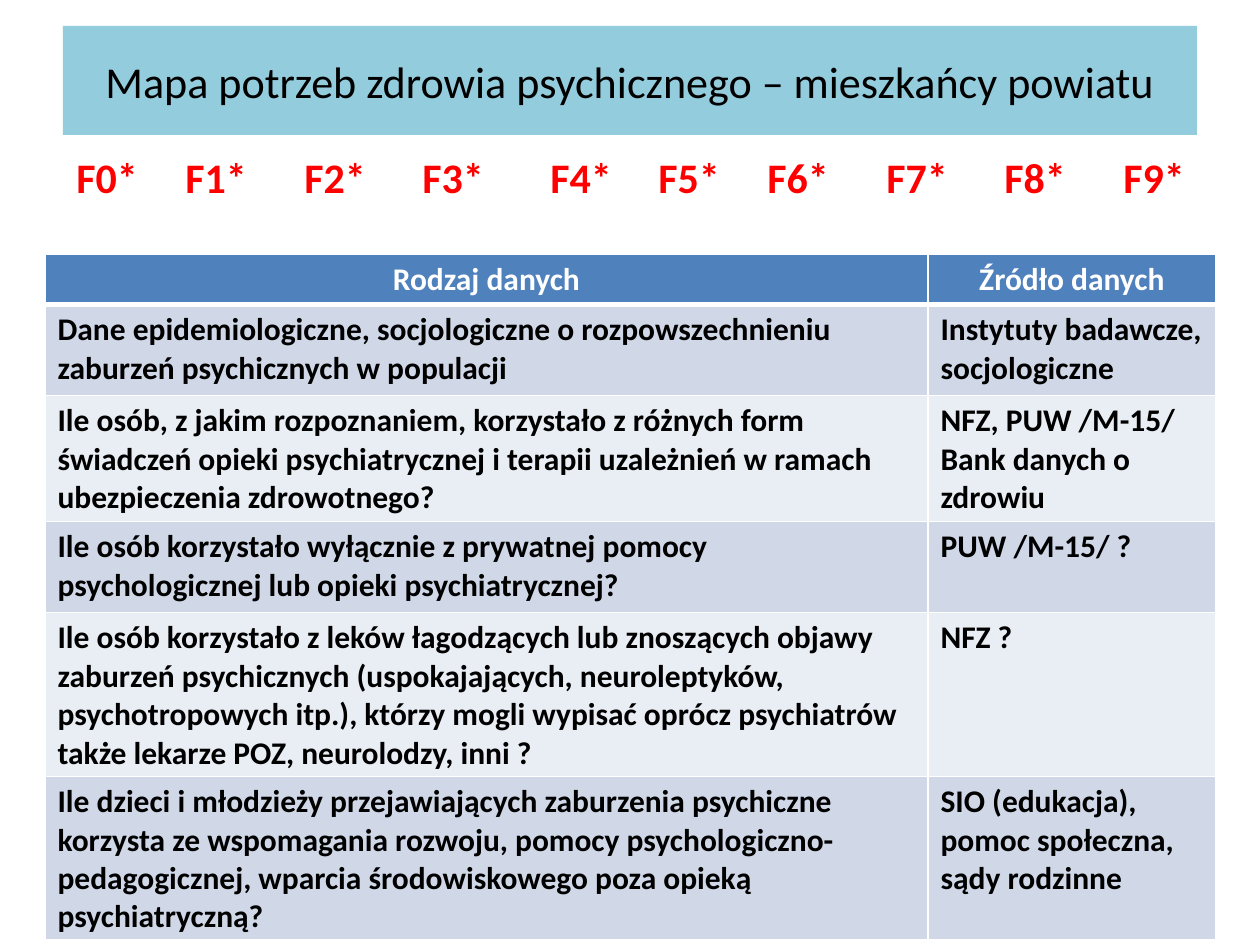
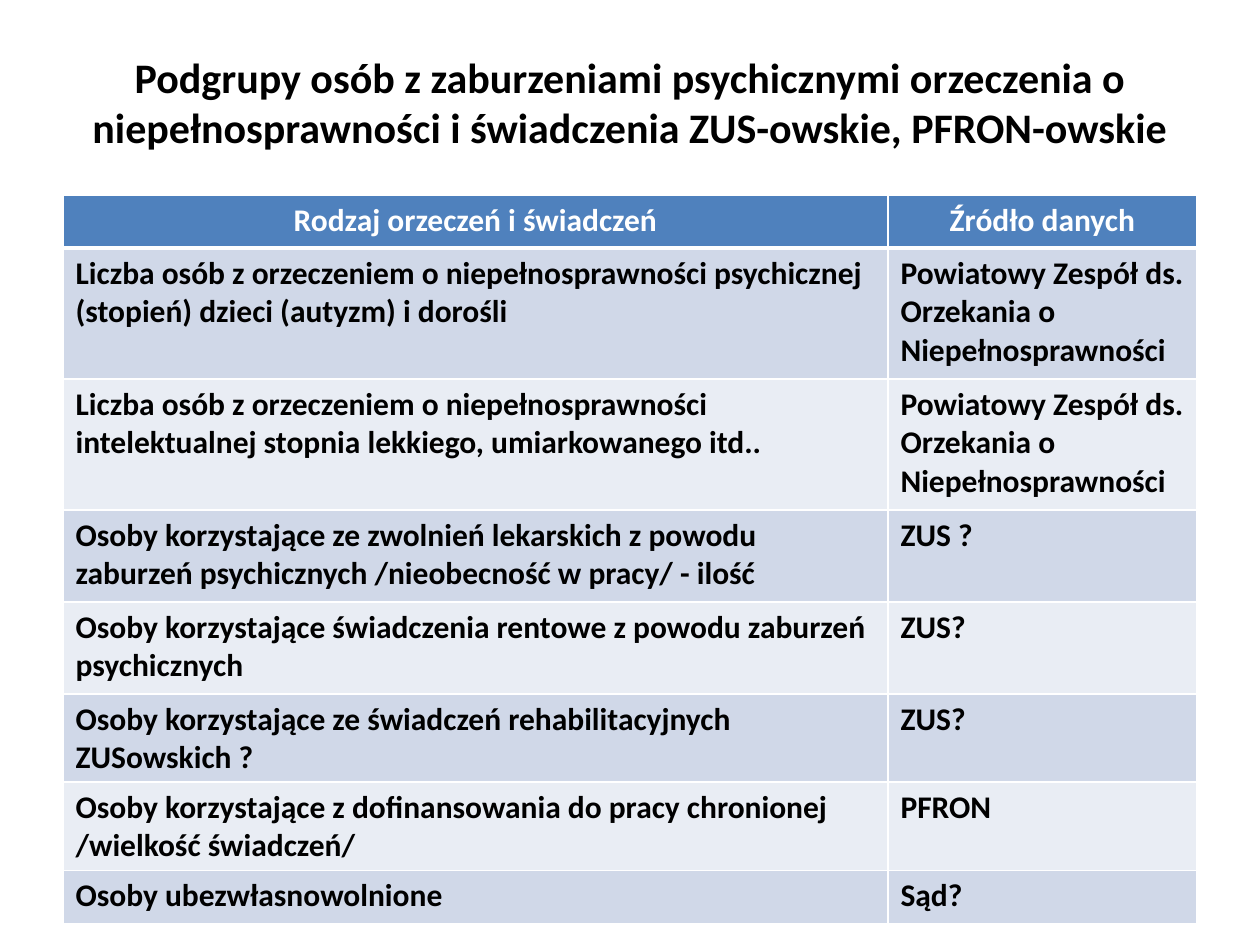
from dataclasses import dataclass

from lxml.etree import SubElement
from pptx import Presentation
from pptx.dml.color import RGBColor as Rgb
from pptx.enum.shapes import MSO_SHAPE as Shape
from pptx.enum.text import MSO_ANCHOR as Anchor, PP_ALIGN as Align
from pptx.oxml.ns import qn
from pptx.util import Pt


@dataclass(frozen=True)
class Theme:
    font: str = "Calibri"
    text: str = "000000"
    white: str = "FFFFFF"
    title_band: str = "93CDDD"
    codes: str = "FF0000"
    header: str = "4F81BD"
    bands: tuple = ("D0D8E8", "E9EDF4")
    band_title_size: float = 25.2
    title_size: int = 24
    codes_size: int = 24
    table_size: int = 18
    border: int = 1
    header_border: int = 3


THEME = Theme()
PX = 914400 / 126  # EMU in one px
SLIDE_W, SLIDE_H = 1260, 945


def px(*lengths):
    return [round(length * PX) for length in lengths]


def write(frame, text, size, color, bold=True, align=Align.LEFT):
    frame.word_wrap = True
    paragraph = frame.paragraphs[0]
    paragraph.alignment = align
    run = paragraph.add_run()
    run.text = text
    run.font.name = THEME.font
    run.font.size = Pt(size)
    run.font.bold = bold
    run.font.color.rgb = Rgb.from_string(color)
    return paragraph


# Content: each table starts with its header row
needs_rows = [
    ("Rodzaj danych", "Źródło danych"),
    ("Dane epidemiologiczne, socjologiczne o rozpowszechnieniu zaburzeń "
     "psychicznych w populacji",
     "Instytuty badawcze, socjologiczne"),
    ("Ile osób, z jakim rozpoznaniem, korzystało z różnych form świadczeń opieki "
     "psychiatrycznej i terapii uzależnień w ramach ubezpieczenia zdrowotnego?",
     "NFZ, PUW /M-15/ Bank danych o zdrowiu"),
    ("Ile osób korzystało wyłącznie z prywatnej pomocy psychologicznej lub opieki "
     "psychiatrycznej?",
     "PUW /M-15/ ?"),
    ("Ile osób korzystało z leków łagodzących lub znoszących objawy zaburzeń "
     "psychicznych (uspokajających, neuroleptyków, psychotropowych itp.), którzy "
     "mogli wypisać oprócz psychiatrów także lekarze POZ, neurolodzy, inni ?",
     "NFZ ?"),
    ("Ile dzieci i młodzieży przejawiających zaburzenia psychiczne korzysta ze "
     "wspomagania rozwoju, pomocy psychologiczno-pedagogicznej, wparcia "
     "środowiskowego poza opieką psychiatryczną?",
     "SIO (edukacja), pomoc społeczna, sądy rodzinne"),
]
disability_board = "Powiatowy Zespół ds. Orzekania o Niepełnosprawności"
benefits_rows = [
    ("Rodzaj orzeczeń i świadczeń", "Źródło danych"),
    ("Liczba osób z orzeczeniem o niepełnosprawności psychicznej (stopień) dzieci "
     "(autyzm) i dorośli", disability_board),
    ("Liczba osób z orzeczeniem o niepełnosprawności intelektualnej stopnia "
     "lekkiego, umiarkowanego itd..", disability_board),
    ("Osoby korzystające ze zwolnień lekarskich z powodu zaburzeń psychicznych "
     "/nieobecność w pracy/ - ilość", "ZUS ?"),
    ("Osoby korzystające świadczenia rentowe z powodu zaburzeń psychicznych", "ZUS?"),
    ("Osoby korzystające ze świadczeń rehabilitacyjnych ZUSowskich ?", "ZUS?"),
    ("Osoby korzystające z dofinansowania do pracy chronionej /wielkość świadczeń/",
     "PFRON"),
    ("Osoby ubezwłasnowolnione", "Sąd?"),
]

deck = Presentation()
deck.slide_width, deck.slide_height = px(SLIDE_W, SLIDE_H)
blank = deck.slide_layouts[6]
needs_slide = deck.slides.add_slide(blank)
benefits_slide = deck.slides.add_slide(blank)

# Title on a coloured band
title_band = needs_slide.shapes.add_shape(Shape.RECTANGLE, *px(63, 26, 1134, 109))
title_band.shadow.inherit = False
title_band.fill.solid()
title_band.fill.fore_color.rgb = Rgb.from_string(THEME.title_band)
title_band.line.fill.background()
title_band.text_frame.vertical_anchor = Anchor.MIDDLE
write(title_band.text_frame, "Mapa potrzeb zdrowia psychicznego – mieszkańcy powiatu",
      THEME.band_title_size, THEME.text, bold=False, align=Align.CENTER)

# Diagnosis codes F0 to F9, spread with tab stops
diagnosis_codes = needs_slide.shapes.add_textbox(*px(64, 145, 1134, 63))
codes_line = write(diagnosis_codes.text_frame, "\t".join(f"F{n}*" for n in range(10)),
                   THEME.codes_size, THEME.codes)
tab_stops = SubElement(codes_line._p.get_or_add_pPr(), qn("a:tabLst"))
for stop in px(109, 228, 346, 474, 582, 691, 810, 928, 1047):
    SubElement(tab_stops, qn("a:tab"), pos=str(stop), algn="l")

# Plain title
benefits_title = benefits_slide.shapes.add_textbox(*px(63, 38, 1134, 127))
benefits_title.text_frame.vertical_anchor = Anchor.MIDDLE
write(benefits_title.text_frame,
      "Podgrupy osób z zaburzeniami psychicznymi orzeczenia o niepełnosprawności "
      "i świadczenia ZUS-owskie, PFRON-owskie",
      THEME.title_size, THEME.text, align=Align.CENTER)

# Data and source tables
tables = [
    (needs_slide, needs_rows, 45, 254, (883, 288), [39] + [91] * 5),
    (benefits_slide, benefits_rows, 63, 195, (825, 309),
     [53, 131, 131, 92, 92, 53, 53, 53]),
]
for slide, rows, left, top, widths, heights in tables:
    table = slide.shapes.add_table(
        len(rows), len(widths), *px(left, top, sum(widths), sum(heights))).table
    for column, width in zip(table.columns, px(*widths)):
        column.width = width
    for row, height in zip(table.rows, px(*heights)):
        row.height = height

    for r, row_texts in enumerate(rows):
        is_header = r == 0
        fill = THEME.header if is_header else THEME.bands[(r - 1) % 2]
        for c, text in enumerate(row_texts):
            cell = table.cell(r, c)
            write(cell.text_frame, text, THEME.table_size,
                  THEME.white if is_header else THEME.text,
                  align=Align.CENTER if is_header else Align.LEFT)

            # Borders come before the fill in the cell properties
            properties = cell._tc.get_or_add_tcPr()
            for side in ("lnL", "lnR", "lnT", "lnB"):
                under_header = (r, side) in ((0, "lnB"), (1, "lnT"))
                weight = THEME.header_border if under_header else THEME.border
                border = SubElement(properties, qn(f"a:{side}"), w=str(Pt(weight)))
                paint = SubElement(border, qn("a:solidFill"))
                SubElement(paint, qn("a:srgbClr"), val=THEME.white)
            cell.fill.solid()
            cell.fill.fore_color.rgb = Rgb.from_string(fill)

deck.save("out.pptx")
